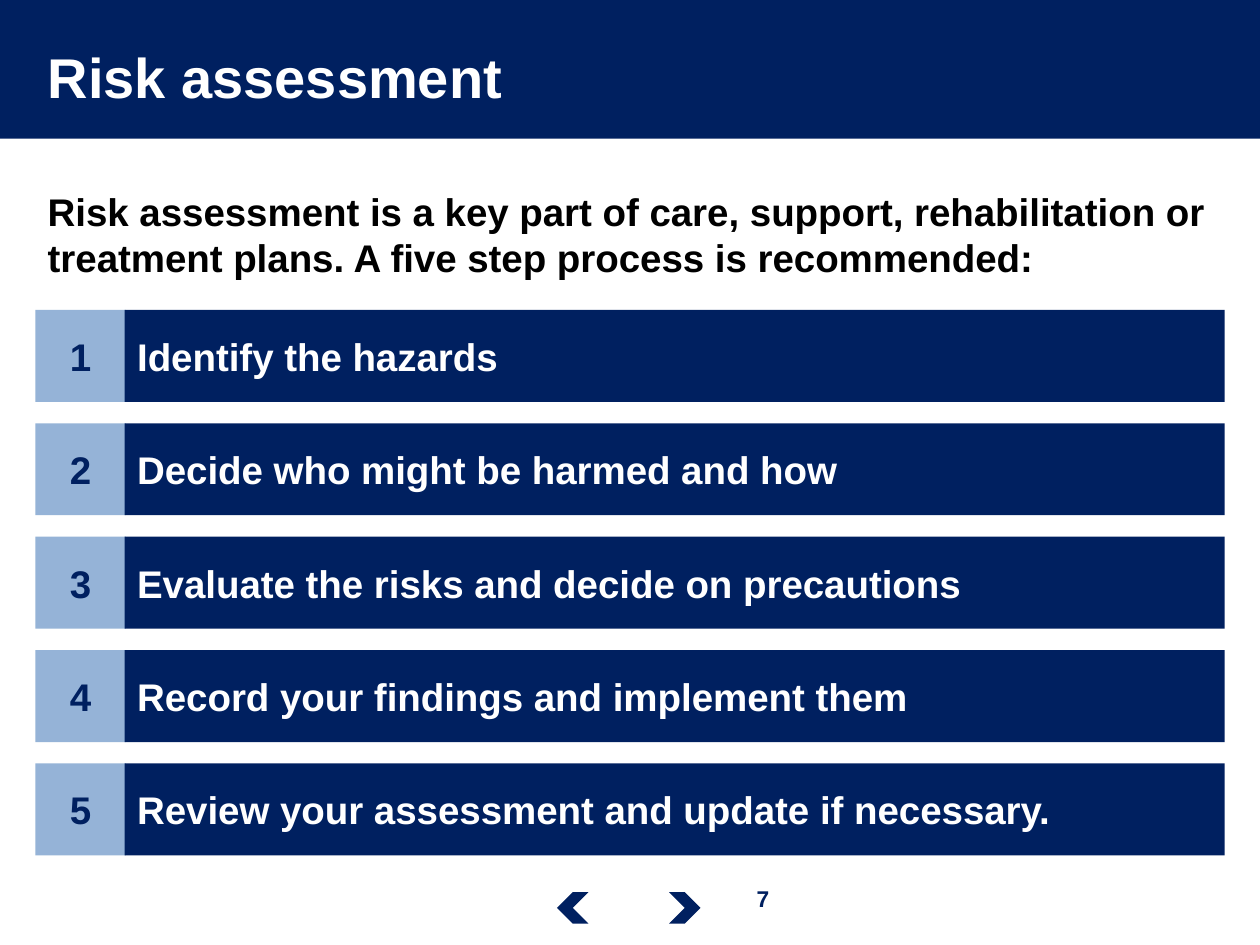
from dataclasses import dataclass

from pptx import Presentation
from pptx.dml.color import RGBColor
from pptx.enum.shapes import MSO_SHAPE
from pptx.enum.text import MSO_ANCHOR, PP_ALIGN
from pptx.util import Inches, Pt

RECT, CHEVRON = MSO_SHAPE.RECTANGLE, MSO_SHAPE.CHEVRON
TOP, MIDDLE = MSO_ANCHOR.TOP, MSO_ANCHOR.MIDDLE
LEFT, CENTER = PP_ALIGN.LEFT, PP_ALIGN.CENTER


@dataclass(frozen=True)
class Theme:
    navy: RGBColor = RGBColor(0x00, 0x20, 0x60)
    light_blue: RGBColor = RGBColor(0x95, 0xB3, 0xD7)
    white: RGBColor = RGBColor(0xFF, 0xFF, 0xFF)
    black: RGBColor = RGBColor(0x00, 0x00, 0x00)
    font: str = "Arial"
    title: Pt = Pt(32)
    body: Pt = Pt(22)
    number: Pt = Pt(13)


theme = Theme()

prs = Presentation()
prs.slide_width, prs.slide_height = Inches(10), Inches(7.5)
s = prs.slides.add_slide(prs.slide_layouts[6])


def add_block(shape, x, y, w, h, fill):
    sp = s.shapes.add_shape(shape, Inches(x), Inches(y), Inches(w), Inches(h))
    sp.shadow.inherit = False
    sp.fill.solid()
    sp.fill.fore_color.rgb = fill
    sp.line.fill.background()
    return sp


def set_text(sp, text, size, color, align=LEFT, anchor=MIDDLE):
    tf = sp.text_frame
    tf.word_wrap = True
    tf.vertical_anchor = anchor
    p = tf.paragraphs[0]
    p.alignment = align
    r = p.add_run()
    r.text = text
    font_format = {"name": theme.font, "size": size, "bold": True}
    for name, value in font_format.items():
        setattr(r.font, name, value)
    r.font.color.rgb = color


# Header band and navigation arrows
add_block(RECT, -0.02, 0, 10.02, 1.1, theme.navy)
for x, rotation in ((5.31, 0), (4.42, 180)):
    add_block(CHEVRON, x, 7.08, 0.25, 0.25, theme.navy).rotation = rotation

# Title, introduction and page number
intro = ("Risk assessment is a key part of care, support, rehabilitation or "
         "treatment plans. A five step process is recommended:")
text_boxes = [
    ((0.28, 0.1, 7.9, 1.01), "Risk assessment", theme.title, theme.white, LEFT, MIDDLE),
    ((0.28, 1.44, 9.42, 0.92), intro, theme.body, theme.black, LEFT, TOP),
    ((5.7, 6.97, 0.71, 0.32), "7", theme.number, theme.navy, CENTER, TOP),
]
for box, *content in text_boxes:
    set_text(s.shapes.add_textbox(*map(Inches, box)), *content)

# Five numbered steps
steps = [
    "Identify the hazards",
    "Decide who might be harmed and how",
    "Evaluate the risks and decide on precautions",
    "Record your findings and implement them",
    "Review your assessment and update if necessary.",
]
STEP_TOP, STEP_PITCH, STEP_HEIGHT = 2.46, 0.9, 0.73
for i, step in enumerate(steps):
    y = STEP_TOP + i * STEP_PITCH
    badge = add_block(RECT, 0.28, y, 0.72, STEP_HEIGHT, theme.light_blue)
    set_text(badge, str(i + 1), theme.body, theme.navy, CENTER)
    bar = add_block(RECT, 0.99, y, 8.73, STEP_HEIGHT, theme.navy)
    set_text(bar, step, theme.body, theme.white)

prs.save("out.pptx")
